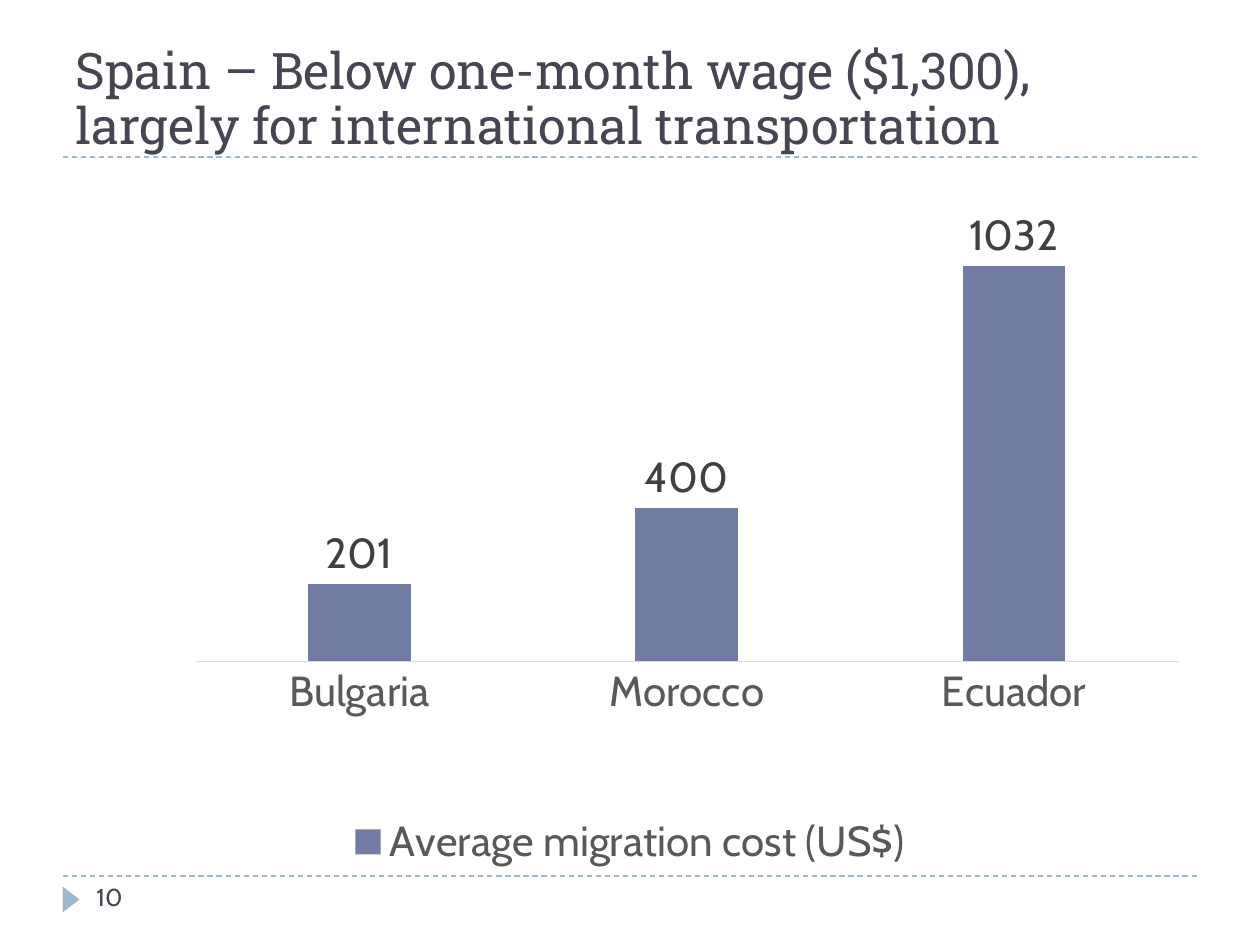
from lxml import etree
from pptx import Presentation
from pptx.chart.data import CategoryChartData
from pptx.dml.color import RGBColor
from pptx.enum import chart as charts, dml, shapes, text
from pptx.oxml.ns import qn
from pptx.util import Emu, Pt

PX = 914400 / 126
COLORS = {
    "heading": "464653",
    "rule": "9FB8CD",
    "bar": "727CA3",
    "axis": "D9D9D9",
    "label": "404040",
    "muted": "595959",
}
HEADING_FONT = "Roboto Slab"
BODY_FONT = "Cabin"


def px(n):
    return Emu(round(n * PX))


def box(*lengths):
    return [px(n) for n in lengths]


def rgb(name):
    return RGBColor.from_string(COLORS[name])


def set_font(font, name, size, color):
    font.name = name
    font.size = Pt(size)
    font.color.rgb = rgb(color)


def add_rule(s, x, y, w):
    line = s.shapes.add_connector(shapes.MSO_CONNECTOR.STRAIGHT, *box(x, y, x + w, y))
    line.line.color.rgb = rgb("rule")
    line.line.width = Pt(0.75)
    line.line.dash_style = dml.MSO_LINE.DASH
    etree.SubElement(line._element.spPr, qn("a:effectLst"))


def add_title(s, x, y, w, h):
    sp = s.shapes.title
    sp.left, sp.top, sp.width, sp.height = box(x, y, w, h)
    tf = sp.text_frame
    tf.text = "Spain – Below one-month wage ($1,300), largely for international transportation"
    tf.word_wrap = True
    tf.auto_size = text.MSO_AUTO_SIZE.NONE
    tf.vertical_anchor = text.MSO_ANCHOR.BOTTOM
    tf.margin_bottom = px(1)
    p = tf.paragraphs[0]
    p.alignment = text.PP_ALIGN.LEFT
    p.line_spacing = 0.92
    set_font(p.font, HEADING_FONT, 28.8, "heading")
    add_rule(s, x, y + h, w)


def add_cost_chart(s, x, y, w, h):
    data = CategoryChartData(number_format="0")
    data.categories = ["Bulgaria", "Morocco", "Ecuador"]
    data.add_series("Average migration cost (US$)", [201, 400, 1032])
    chart = s.shapes.add_chart(
        charts.XL_CHART_TYPE.COLUMN_CLUSTERED, *box(x, y, w, h), data
    ).chart
    chart.has_title = False
    set_font(chart.font, BODY_FONT, 24, "muted")

    # Axes
    values = chart.value_axis
    values.minimum_scale, values.maximum_scale = 0, 1200
    values.has_major_gridlines = False
    values.visible = False
    countries = chart.category_axis
    countries.major_tick_mark = charts.XL_TICK_MARK.NONE
    countries.format.line.color.rgb = rgb("axis")
    countries.format.line.width = Pt(0.75)
    set_font(countries.tick_labels.font, BODY_FONT, 24, "muted")

    # Columns and their values
    plot = chart.plots[0]
    plot.gap_width = 219
    plot.vary_by_categories = False
    fill = plot.series[0].format.fill
    fill.solid()
    fill.fore_color.rgb = rgb("bar")
    plot.has_data_labels = True
    labels = plot.data_labels
    labels.show_value = True
    labels.number_format, labels.number_format_is_linked = "0", False
    labels.position = charts.XL_LABEL_POSITION.OUTSIDE_END
    set_font(labels.font, BODY_FONT, 24, "label")

    # Legend
    chart.has_legend = True
    chart.legend.position = charts.XL_LEGEND_POSITION.BOTTOM
    chart.legend.include_in_layout = False
    set_font(chart.legend.font, BODY_FONT, 24, "muted")

    # Fixed inner plot area, as fractions of the chart
    area = chart._chartSpace.chart.plotArea
    for old in area.findall(qn("c:layout")):
        area.remove(old)
    layout = etree.Element(qn("c:layout"))
    area.insert(0, layout)
    manual = etree.SubElement(layout, qn("c:manualLayout"))
    settings = {"layoutTarget": "inner", "xMode": "edge", "yMode": "edge",
                "x": 0.117, "y": 0.047, "w": 0.866, "h": 0.65}
    for tag, value in settings.items():
        etree.SubElement(manual, qn(f"c:{tag}"), val=str(value))


def add_footer(s, x, y, w):
    add_rule(s, x, y, w)
    marker = s.shapes.add_shape(
        shapes.MSO_SHAPE.ISOSCELES_TRIANGLE, *box(x - 5, y + 15, 26, 17)
    )
    marker.rotation = 90
    marker.shadow.inherit = False
    marker.fill.solid()
    marker.fill.fore_color.rgb = rgb("rule")
    marker.line.fill.background()

    number = s.shapes.add_textbox(*box(x + 21, y, 273, 50))
    tf = number.text_frame
    tf.word_wrap = True
    tf.text = "10"
    set_font(tf.paragraphs[0].font, BODY_FONT, 14, "heading")


def main():
    prs = Presentation()
    prs.slide_width, prs.slide_height = box(1260, 945)
    s = prs.slides.add_slide(prs.slide_layouts[5])
    add_title(s, 63, 21, 1134, 136)
    add_cost_chart(s, 63, 168, 1134, 708)
    add_footer(s, 63, 876, 1134)
    prs.save("out.pptx")


if __name__ == "__main__":
    main()
